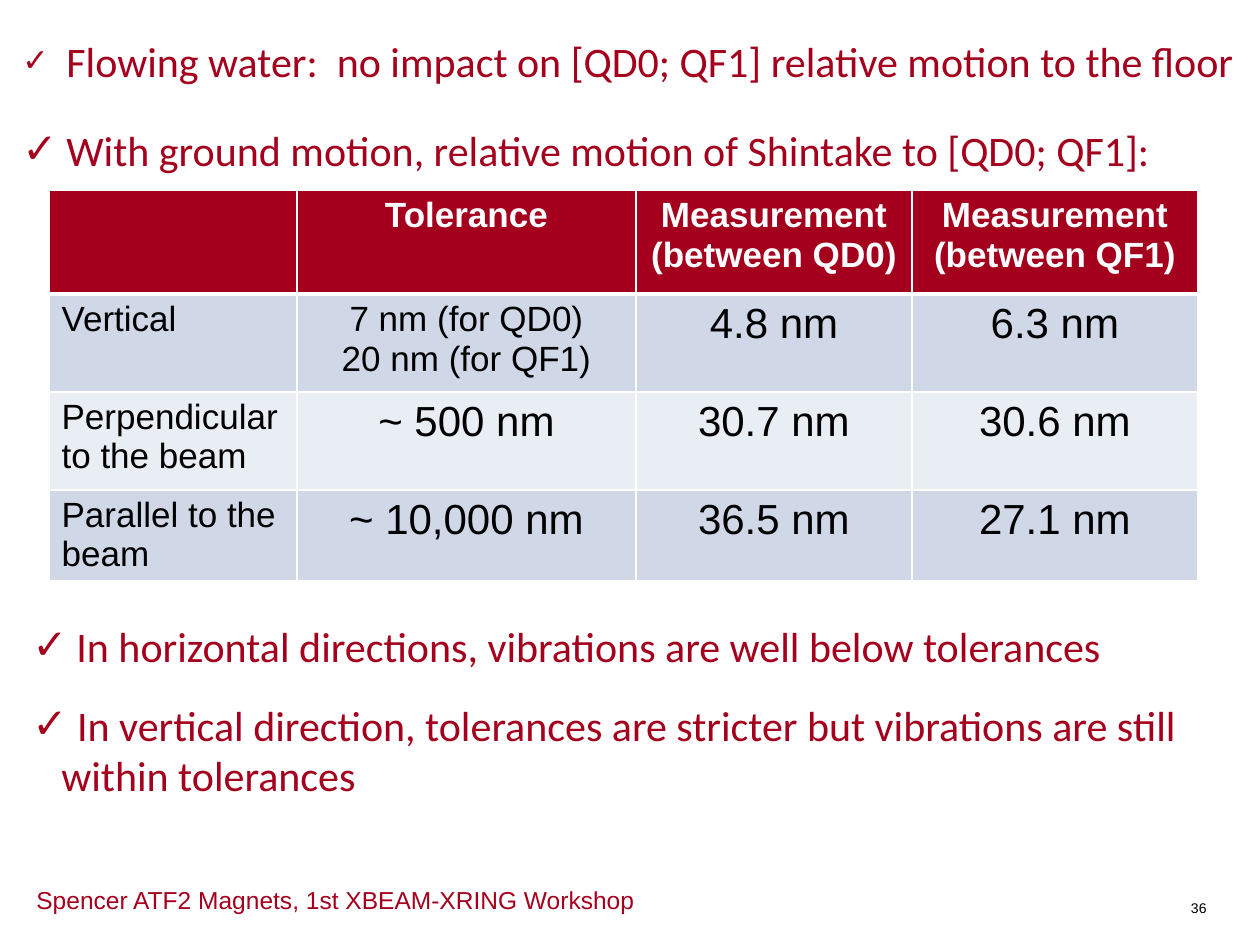
from dataclasses import dataclass

from lxml.etree import SubElement
from pptx import Presentation
from pptx.dml.color import RGBColor
from pptx.enum.text import MSO_ANCHOR, PP_ALIGN
from pptx.oxml.ns import qn
from pptx.util import Pt

PX = 7257.14  # EMU per px at 126 px to the inch


@dataclass(frozen=True)
class Theme:
    red: str = "A4001D"
    white: str = "FFFFFF"
    black: str = "000000"
    band_dark: str = "D0D8E8"
    band_light: str = "E9EDF4"
    body_font: str = "Calibri"
    table_font: str = "Arial"
    body_size: int = 24
    value_size: int = 24
    label_size: int = 20
    footer_size: int = 14
    number_size: int = 8


theme = Theme()


def add_run(paragraph, text, font, size, color, bold=False):
    run = paragraph.add_run()
    run.text = text
    run.font.name = font
    run.font.size = Pt(size)
    run.font.bold = bold
    run.font.color.rgb = RGBColor.from_string(color)


def add_text_box(slide, *box):
    shape = slide.shapes.add_textbox(*(round(value * PX) for value in box))
    shape.text_frame.word_wrap = True
    return shape.text_frame


presentation = Presentation()
presentation.slide_width = round(1260 * PX)
presentation.slide_height = round(945 * PX)
slide = presentation.slides.add_slide(presentation.slide_layouts[6])

# Results table: header row, then one row per direction
column_widths = [248, 339, 276, 286]
row_heights = [104, 98, 98, 86]
rows = [
    ["", "Tolerance", "Measurement\n(between QD0)", "Measurement\n(between QF1)"],
    ["Vertical", "7 nm (for QD0)\n20 nm (for QF1)", "4.8 nm", "6.3 nm"],
    ["Perpendicular to the beam", "~ 500 nm", "30.7 nm", "30.6 nm"],
    ["Parallel to the beam", "~ 10,000 nm", "36.5 nm", "27.1 nm"],
]
table = slide.shapes.add_table(
    len(rows), len(column_widths), round(49 * PX), round(190 * PX),
    round(sum(column_widths) * PX), round(sum(row_heights) * PX),
).table
for column, width in zip(table.columns, column_widths):
    column.width = round(width * PX)

for row_index, texts in enumerate(rows):
    table.rows[row_index].height = round(row_heights[row_index] * PX)
    header = row_index == 0
    band = theme.band_dark if row_index % 2 else theme.band_light
    for column_index, text in enumerate(texts):
        cell = table.cell(row_index, column_index)

        # White borders, with a thicker rule under the header
        thick_side = {0: "a:lnB", 1: "a:lnT"}.get(row_index)
        for side in ("a:lnL", "a:lnR", "a:lnT", "a:lnB"):
            width = Pt(3 if side == thick_side else 1)
            line = SubElement(cell._tc.get_or_add_tcPr(), qn(side), w=str(width))
            SubElement(SubElement(line, qn("a:solidFill")), qn("a:srgbClr"), val=theme.white)
        cell.fill.solid()
        cell.fill.fore_color.rgb = RGBColor.from_string(theme.red if header else band)

        if not text:
            continue
        single_value = not header and column_index > 0 and "\n" not in text
        for line_index, line_text in enumerate(text.split("\n")):
            frame = cell.text_frame
            paragraph = frame.add_paragraph() if line_index else frame.paragraphs[0]
            paragraph.alignment = PP_ALIGN.CENTER if column_index else PP_ALIGN.LEFT
            add_run(
                paragraph, line_text, theme.table_font,
                theme.value_size if single_value else theme.label_size,
                theme.white if header else theme.black, header,
            )

# Check-marked statements: box, hanging indent, check size in percent, text
statements = [
    ((10, 29, 1250, 64), 44, 75,
     "Flowing water:  no impact on [QD0; QF1] relative motion to the floor"),
    ((10, 118, 1338, 102), 44, 100,
     "With ground motion, relative motion of Shintake to [QD0; QF1]:"),
    ((20, 614, 1250, 63), 44, 100,
     "In horizontal directions, vibrations are well below tolerances"),
    ((20, 693, 1250, 115), 29, 100,
     " In vertical direction, tolerances are stricter but vibrations are still within tolerances"),
]
for box, indent, check_size, text in statements:
    paragraph = add_text_box(slide, *box).paragraphs[0]
    properties = paragraph._p.get_or_add_pPr()
    properties.set("marL", str(round(indent * PX)))
    properties.set("indent", str(-round(indent * PX)))
    SubElement(properties, qn("a:buSzPct"), val=str(check_size * 1000))
    SubElement(properties, qn("a:buFont"), typeface=theme.table_font)
    SubElement(properties, qn("a:buChar"), char="✓")
    add_run(paragraph, text, theme.body_font, theme.body_size, theme.red)

# Footer and page number
footer = add_text_box(slide, 24, 879, 716, 66)
add_run(footer.paragraphs[0], "Spencer ATF2 Magnets, 1st XBEAM-XRING Workshop",
        theme.table_font, theme.footer_size, theme.red)

page_number = add_text_box(slide, 1181, 871, 44, 74)
page_number.vertical_anchor = MSO_ANCHOR.MIDDLE
page_number.margin_left = page_number.margin_right = round(10 * PX)
add_run(page_number.paragraphs[0], "36", theme.table_font, theme.number_size, theme.black)

presentation.save("out.pptx")
